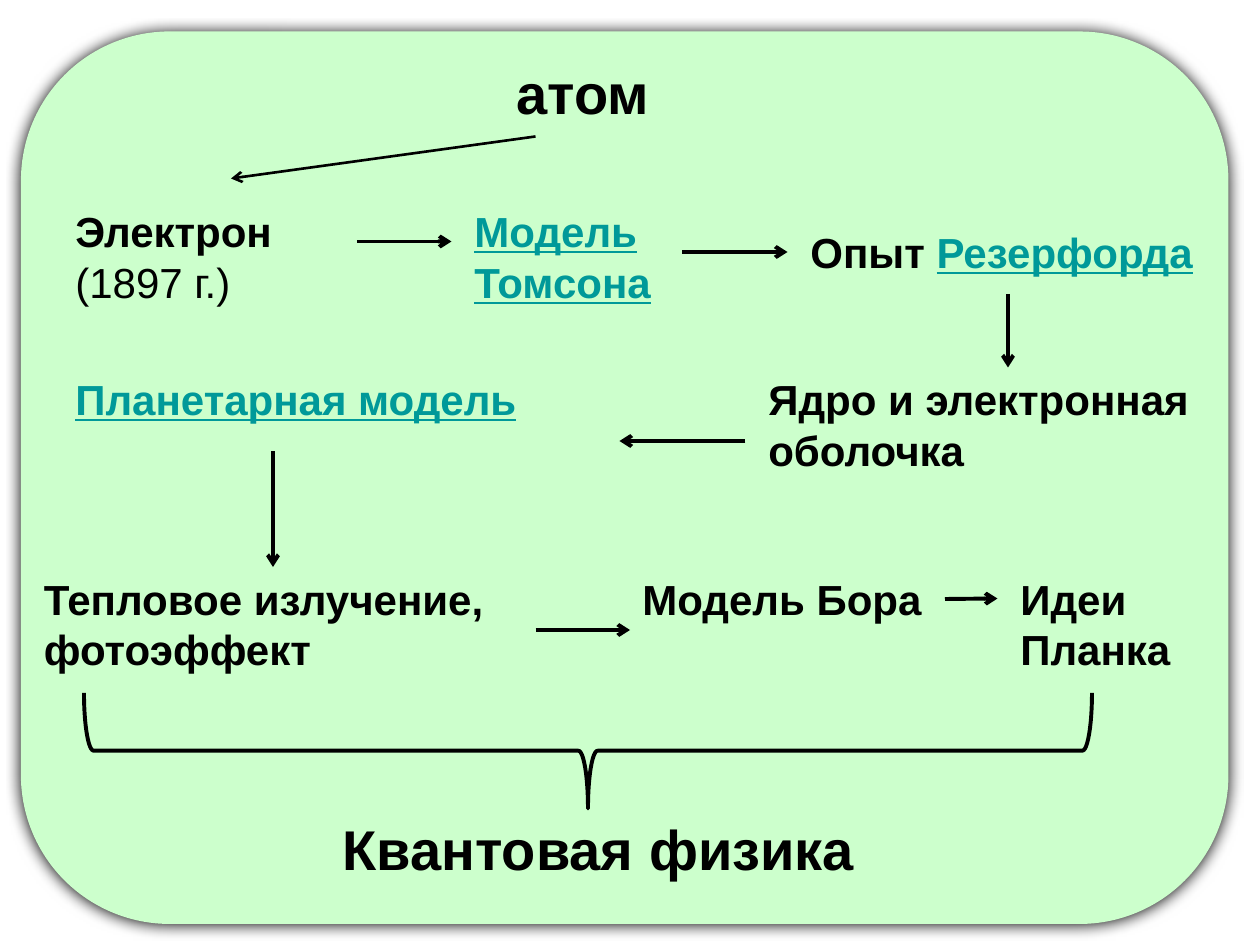
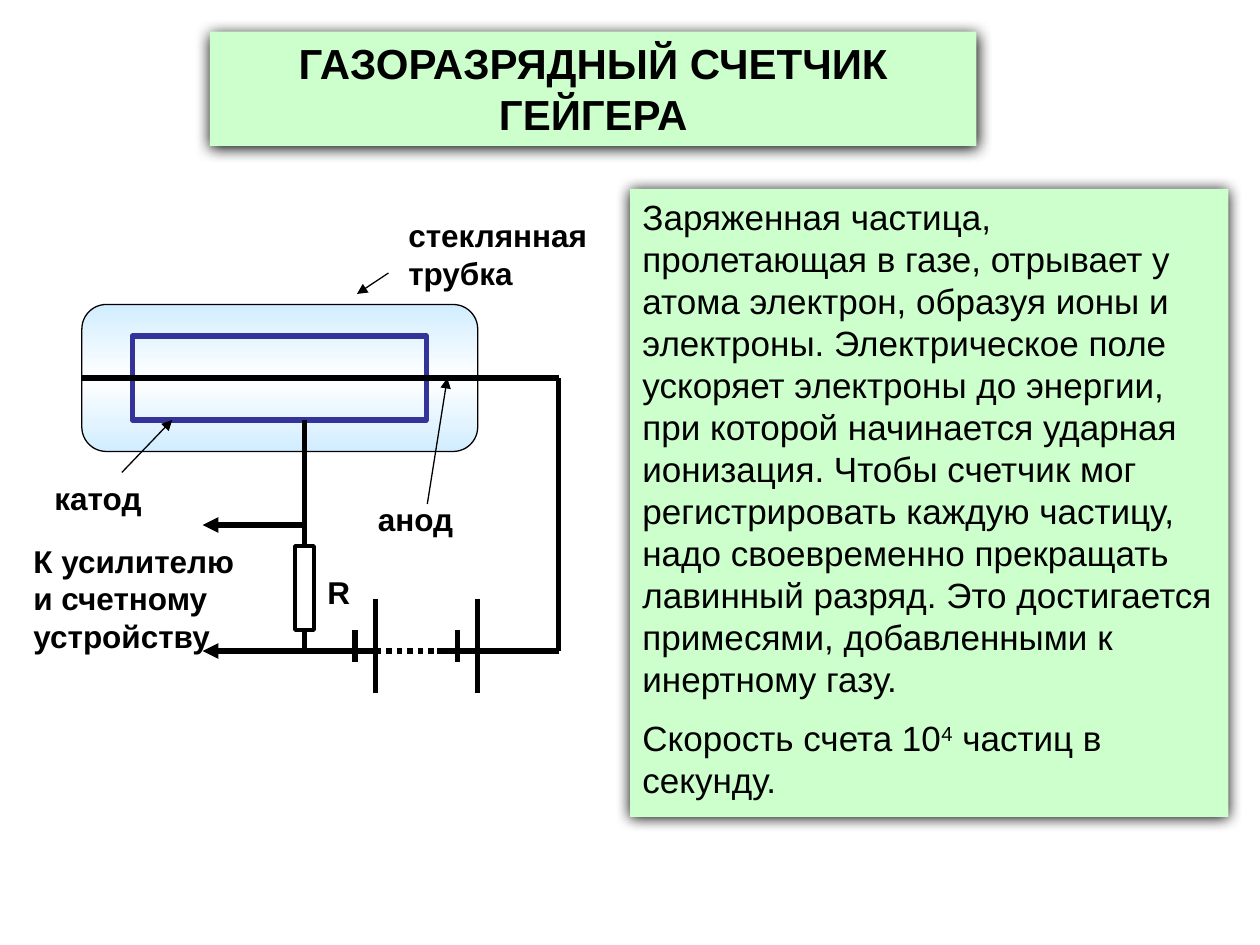
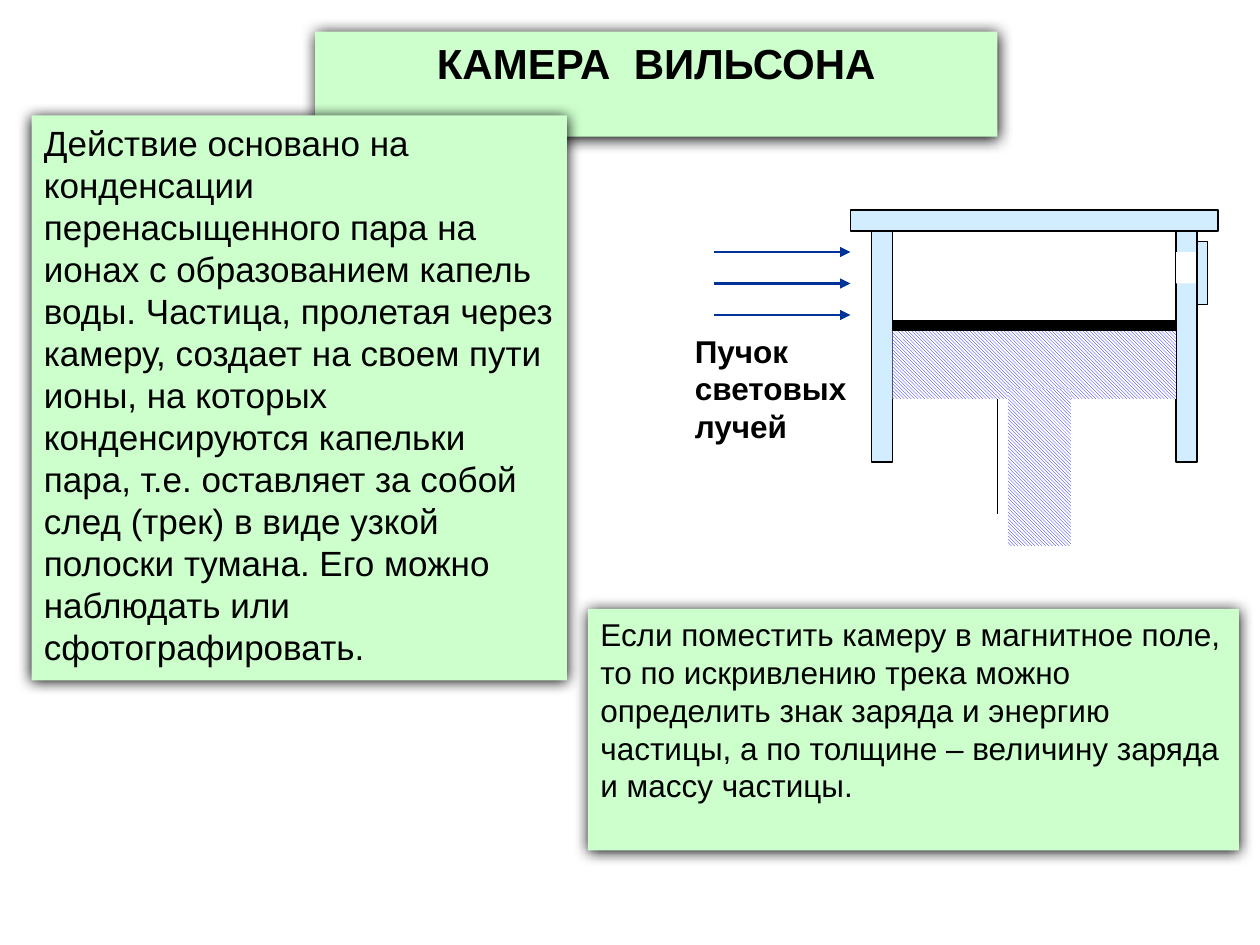
from copy import deepcopy

from lxml.etree import SubElement
from pptx import Presentation
from pptx.dml.color import RGBColor
from pptx.enum.dml import MSO_LINE, MSO_PATTERN
from pptx.enum.shapes import MSO_CONNECTOR, MSO_SHAPE
from pptx.enum.text import MSO_ANCHOR, MSO_AUTO_SIZE, PP_ALIGN
from pptx.oxml.ns import qn
from pptx.util import Emu, Pt

PX = 7620
FONT = "Arial"
TITLE_ONLY = 5
TOP, LEFT, BOTTOM, RIGHT = range(4)
COLORS = {
    "black": "000000",
    "white": "FFFFFF",
    "panel": "CCFFCC",
    "link": "009999",
    "glass": "D1EDFF",
    "cathode": "333399",
    "hatch": "0000FF",
    "beam": "003399",
}


def px(*lengths):
    """Turn px lengths into EMU."""
    return [Emu(n * PX) for n in lengths]


def rgb(name):
    """Look up a colour by name."""
    return RGBColor.from_string(COLORS[name])


def link(text):
    """Return a run that looks like a link."""
    return text, {"color": "link", "underline": True}


def write(sp, *paras, size=24, bold=False, align=PP_ALIGN.LEFT, gap=0):
    """Fill a shape with paragraphs, each a string or a list of runs."""
    tf = sp.text_frame
    tf.word_wrap = True
    tf.auto_size = MSO_AUTO_SIZE.SHAPE_TO_FIT_TEXT
    tf.vertical_anchor = MSO_ANCHOR.TOP
    for i, runs in enumerate(paras):
        p = tf.add_paragraph() if i else tf.paragraphs[0]
        p.alignment = align
        if i:
            p.space_before = Pt(gap)
        for run in [runs] if isinstance(runs, str) else runs:
            text, style = (run, {}) if isinstance(run, str) else run
            r = p.add_run()
            r.text = text
            r.font.name = FONT
            r.font.size = Pt(size)
            r.font.bold = style.get("bold", bold)
            r.font.color.rgb = rgb(style.get("color", "black"))
            if style.get("underline"):
                r.font.underline = True
            if style.get("raised"):
                r.font._element.set("baseline", "30000")
    return sp


def label(s, box, *paras, bold=True, **style):
    """Add a text box."""
    return write(s.shapes.add_textbox(*px(*box)), *paras, bold=bold, **style)


def shape(s, kind, box, fill=None, line=None, width=0.75):
    """Add a preset shape with plain fill and outline."""
    sp = s.shapes.add_shape(kind, *px(*box))
    sp.shadow.inherit = False
    if fill:
        sp.fill.solid()
        sp.fill.fore_color.rgb = rgb(fill)
    else:
        sp.fill.background()
    if line:
        sp.line.color.rgb = rgb(line)
        sp.line.width = Pt(width)
    else:
        sp.line.fill.background()
    return sp


def line(s, x1, y1, x2, y2, width=0.75, color="black", tail=None, dash=None):
    """Add a straight line, with an arrowhead at its end if asked."""
    cxn = s.shapes.add_connector(MSO_CONNECTOR.STRAIGHT, *px(x1, y1, x2, y2))
    cxn.line.color.rgb = rgb(color)
    cxn.line.width = Pt(width)
    if dash:
        cxn.line.dash_style = dash
    spPr = cxn.element.spPr
    if tail:
        SubElement(spPr.find(qn("a:ln")), qn("a:tailEnd"), type=tail)
    SubElement(spPr, qn("a:effectLst"))
    return cxn


def as_panel(sp):
    """Give a shape the green fill and soft shadow of a panel."""
    sp.fill.solid()
    sp.fill.fore_color.rgb = rgb("panel")
    sp.line.fill.background()
    sp.shadow.inherit = False
    effects = sp.element.spPr.find(qn("a:effectLst"))
    shadow = SubElement(effects, qn("a:outerShdw"), blurRad=str(Pt(8.5)),
                        dist=str(Pt(1)), dir="5400000", algn="t", rotWithShape="0")
    SubElement(shadow, qn("a:srgbClr"), val=COLORS["black"])
    return sp


def panel(s, box, *paras, kind=MSO_SHAPE.RECTANGLE, **style):
    """Add a green panel holding text."""
    return write(as_panel(shape(s, kind, box)), *paras, **style)


def title(s, box, text, size=24, align=PP_ALIGN.CENTER):
    """Move and format the title placeholder."""
    sp = s.shapes.title
    sp.left, sp.top, sp.width, sp.height = px(*box)
    return write(sp, text, size=size, bold=True, align=align)


def new_slide(prs):
    """Add a title-only slide."""
    return prs.slides.add_slide(prs.slide_layouts[TITLE_ONLY])


def atom_map(s, x, y, w, h):
    """Draw the path from the atom to quantum physics."""
    back = panel(s, (x, y, w, h), kind=MSO_SHAPE.ROUNDED_RECTANGLE)
    s.shapes.element.insert(2, back.element)
    title(s, (x + 460, y + 20, 190, 77), "атом", size=32, align=PP_ALIGN.LEFT)
    one, two = 61, 109
    steps = [
        (40, 160, 270, two, ["Электрон ", ("(1897 г.)", {"bold": False})]),
        (420, 160, 200, two, [link("Модель Томсона")]),
        (740, 180, 390, one, ["Опыт ", link("Резерфорда")]),
        (40, 320, 470, one, [link("Планетарная модель")]),
        (700, 320, 430, two, "Ядро и электронная оболочка"),
        (10, 510, 470, two, "Тепловое излучение, фотоэффект"),
        (940, 510, 220, two, "Идеи Планка"),
    ]
    for dx, dy, bw, bh, text in steps:
        label(s, (x + dx, y + dy, bw, bh), text)
    bohr = label(s, (x + 580, y + 510, 300, one), "Модель Бора")
    arrows = [
        (490, 100, 200, 140, 1.5),
        (320, 200, 410, 200, 2.25),
        (630, 210, 730, 210, 2.25),
        (940, 250, 940, 320, 2.25),
        (690, 390, 570, 390, 2.25),
        (240, 400, 240, 510, 2.25),
        (490, 570, 580, 570, 2.25),
    ]
    for x1, y1, x2, y2, width in arrows:
        line(s, x + x1, y + y1, x + x2, y + y2, width, tail="arrow")
    to_planck = line(s, x + 880, y + 540, x + 930, y + 540, 2.25, tail="arrow")
    to_planck.begin_connect(bohr, RIGHT)
    brace = shape(s, MSO_SHAPE.RIGHT_BRACE, (x + 485, y + 205, 110, 960),
                  line="black", width=2.25)
    brace.rotation = 90
    label(s, (x + 160, y + 740, 780, 77), "Квантовая физика",
          size=32, align=PP_ALIGN.CENTER)


def glass_tube(s, box):
    """Add the glass tube, shaded from its edges to its middle."""
    sp = shape(s, MSO_SHAPE.ROUNDED_RECTANGLE, box, line="black")
    sp.fill.gradient()
    stops = sp.element.spPr.find(".//" + qn("a:gsLst"))
    stops.append(deepcopy(stops[0]))
    shades = [(0, "glass"), (0.5, "white"), (1, "glass")]
    for stop, (position, color) in zip(sp.fill.gradient_stops, shades):
        stop.position = position
        stop.color.rgb = rgb(color)
    sp.fill.gradient_angle = 90
    return sp


def geiger_counter(s, x, y, w, h):
    """Draw the counter and its circuit around the tube's box."""
    g = s.shapes.add_group_shape()
    axis, rail, right, stem = y + h // 2, y + 330, x + 454, x + 212
    tube = glass_tube(g, (x, y, w, h))
    shape(g, MSO_SHAPE.RECTANGLE, (x + 48, y + 30, 280, 80), line="cathode", width=3)
    anode = line(g, x, axis, right, axis, 3)
    anode.begin_connect(tube, LEFT)
    line(g, right, axis, right, rail, 3)
    line(g, x + 338, rail, right, rail, 3)
    for plate, half in [(260, 15), (280, 45), (358, 15), (377, 45)]:
        middle = rail - 5
        line(g, x + plate, middle - half, x + plate, middle + half, 3)
    line(g, x + 280, rail, x + 338, rail, 3, dash=MSO_LINE.ROUND_DOT)
    line(g, x + 280, rail, x + 115, rail, 3, tail="triangle")
    line(g, stem, y + 210, x + 115, y + 210, 3, tail="triangle")
    resistor = shape(g, MSO_SHAPE.RECTANGLE, (stem - 9, y + 230, 18, 80),
                     line="black", width=2.25)
    line(g, stem, rail, stem, y + 310, 3).end_connect(resistor, BOTTOM)
    line(g, stem, y + 230, stem, y + 110, 3).begin_connect(resistor, TOP)
    for x1, y1, x2, y2 in [(38, 160, 86, 110), (329, 190, 348, 70), (292, -30, 262, -10)]:
        line(g, x + x1, y + y1, x + x2, y + y2, tail="triangle")
    names = [
        (-38, 160, 116, 48, "катод"),
        (270, 180, 116, 48, "анод"),
        (299, -90, 203, 84, "стеклянная трубка"),
        (-58, 220, 232, 120, "К усилителю и счетному устройству"),
        (222, 250, 38, 48, "R"),
    ]
    for dx, dy, bw, bh, text in names:
        label(g, (x + dx, y + dy, bw, bh), text, size=18)


def cloud_chamber(s, x, y, w, h):
    """Draw the chamber with its piston below the lid's box."""
    line(s, x + 140, y + 150, x + 140, y + 290)
    g = s.shapes.add_group_shape()
    glass = [(0, 0, w, h), (20, h, 20, 220), (310, h, 20, 220)]
    for dx, dy, bw, bh in glass:
        shape(g, MSO_SHAPE.RECTANGLE, (x + dx, y + dy, bw, bh), "glass", "black")
    for dx, dy, bw, bh in [(40, 110, 270, 70), (150, 170, 60, 150)]:
        piston = shape(g, MSO_SHAPE.RECTANGLE, (x + dx, y + dy, bw, bh))
        piston.fill.patterned()
        piston.fill.pattern = MSO_PATTERN.DARK_DOWNWARD_DIAGONAL
        piston.fill.fore_color.rgb = rgb("hatch")
        piston.fill.back_color.rgb = rgb("white")
    line(g, x + 40, y + 110, x + 310, y + 110, 6)
    for i in range(3):
        beam = y + 40 + 30 * i
        line(g, x - 130, beam, x, beam, 1.5, "beam", tail="triangle")
    shape(g, MSO_SHAPE.RECTANGLE, (x + 310, y + 40, 30, 30), "white")
    shape(g, MSO_SHAPE.RECTANGLE, (x + 330, y + 30, 10, 60), "glass", "black")
    label(g, (x - 160, y + 110, 170, 120), "Пучок световых лучей", size=18)


def geiger_slide(prs):
    """Build the slide on the Geiger counter."""
    s = new_slide(prs)
    as_panel(title(s, (200, 30, 730, 109), "ГАЗОРАЗРЯДНЫЙ СЧЕТЧИК ГЕЙГЕРА"))
    geiger_counter(s, 78, 290, 377, 140)
    panel(s, (600, 180, 570, 598),
          "Заряженная частица, пролетающая в газе, отрывает у атома электрон, "
          "образуя ионы и электроны. Электрическое поле ускоряет электроны до "
          "энергии, при которой начинается ударная ионизация. Чтобы счетчик мог "
          "регистрировать каждую частицу, надо своевременно прекращать лавинный "
          "разряд. Это достигается примесями, добавленными к инертному газу.",
          ["Скорость счета 10", ("4", {"raised": True}), " частиц в секунду."],
          size=20, gap=10)


def wilson_slide(prs):
    """Build the slide on the cloud chamber."""
    s = new_slide(prs)
    as_panel(title(s, (300, 30, 650, 61), "КАМЕРА  ВИЛЬСОНА"))
    cloud_chamber(s, 810, 200, 350, 20)
    panel(s, (30, 110, 510, 538),
          "Действие основано на конденсации перенасыщенного пара на ионах с "
          "образованием капель воды. Частица, пролетая через камеру, создает на "
          "своем пути ионы, на которых конденсируются капельки пара, т.е. "
          "оставляет за собой след (трек) в виде узкой полоски тумана. Его можно "
          "наблюдать или сфотографировать.", size=20)
    panel(s, (560, 580, 620, 230),
          "Если поместить камеру в магнитное поле, то по искривлению трека можно "
          "определить знак заряда и энергию частицы, а по толщине – величину "
          "заряда и массу частицы.", size=18)


def main():
    """Build the presentation and save it."""
    prs = Presentation()
    prs.slide_width, prs.slide_height = px(1200, 900)
    atom_map(new_slide(prs), 20, 30, 1150, 850)
    geiger_slide(prs)
    wilson_slide(prs)
    prs.save("out.pptx")


if __name__ == "__main__":
    main()
